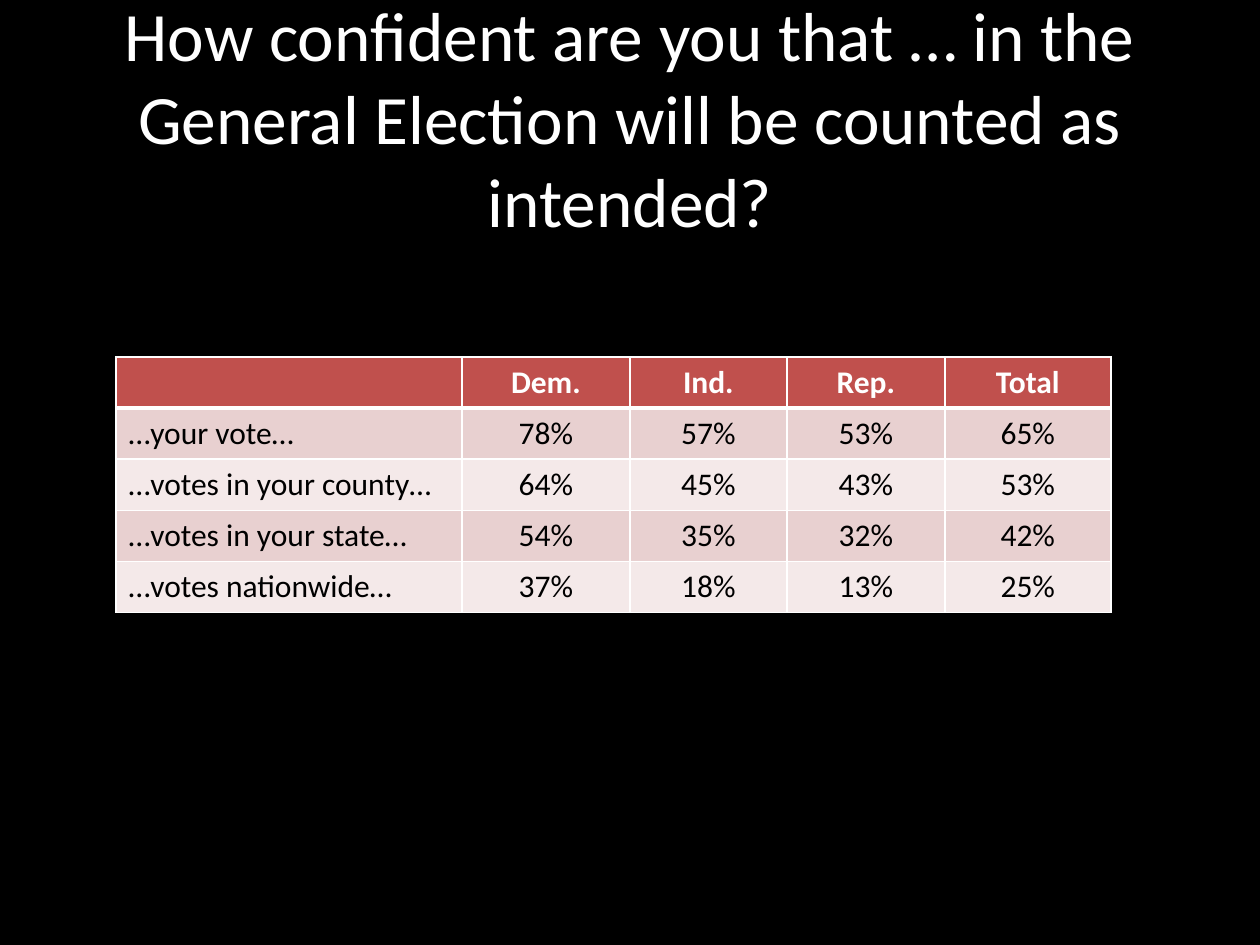
import dataclasses

import lxml.etree
import pptx
import pptx.dml.color
import pptx.enum.text
import pptx.oxml.ns
import pptx.util


@dataclasses.dataclass(frozen=True)
class Theme:
    font: str = "Calibri"
    background: str = "000000"
    light: str = "FFFFFF"
    dark: str = "000000"
    header: str = "C0504D"
    bands: tuple = ("E8D0D0", "F4E9E9")
    title_size: float = 39.6
    table_size: float = 18
    thin_line: float = 1
    thick_line: float = 3


THEME = Theme()
PX = pptx.util.Inches(1) // 126
CENTER = pptx.enum.text.PP_ALIGN.CENTER
LEFT = pptx.enum.text.PP_ALIGN.LEFT


def format_text(frame, size, color, align, bold=False):
    for para in frame.paragraphs:
        para.alignment = align
        for span in para.runs:
            span.font.name = THEME.font
            span.font.size = pptx.util.Pt(size)
            span.font.bold = bold
            span.font.color.rgb = pptx.dml.color.RGBColor.from_string(color)


def add_border(cell, side, width):
    """Draw one cell edge; call in the order L, R, T, B, before the fill is set."""
    properties = cell._tc.get_or_add_tcPr()
    line = lxml.etree.SubElement(
        properties, pptx.oxml.ns.qn(f"a:ln{side}"), w=str(pptx.util.Pt(width))
    )
    fill = lxml.etree.SubElement(line, pptx.oxml.ns.qn("a:solidFill"))
    lxml.etree.SubElement(fill, pptx.oxml.ns.qn("a:srgbClr"), val=THEME.light)


deck = pptx.Presentation()
deck.slide_width = 1260 * PX
deck.slide_height = 945 * PX
page = deck.slides.add_slide(deck.slide_layouts.get_by_name("Title Only"))
page.background.fill.solid()
page.background.fill.fore_color.rgb = pptx.dml.color.RGBColor.from_string(THEME.background)

# Title
title = page.shapes.title
title.left, title.top, title.width, title.height = 63 * PX, 38 * PX, 1134 * PX, 157 * PX
frame = title.text_frame
frame.text = (
    "How confident are you that … in the General Election will be counted as intended?"
)
frame.word_wrap = True
frame.auto_size = pptx.enum.text.MSO_AUTO_SIZE.NONE
frame.vertical_anchor = pptx.enum.text.MSO_ANCHOR.MIDDLE
format_text(frame, THEME.title_size, THEME.light, CENTER)

# Confidence by party
rows = [
    ("", "Dem.", "Ind.", "Rep.", "Total"),
    ("…your vote…", "78%", "57%", "53%", "65%"),
    ("…votes in your county…", "64%", "45%", "43%", "53%"),
    ("…votes in your state…", "54%", "35%", "32%", "42%"),
    ("…votes nationwide…", "37%", "18%", "13%", "25%"),
]
column_widths = [346, 168, 157, 158, 166]
row_height = 51
table = page.shapes.add_table(
    len(rows), len(column_widths),
    116 * PX, 357 * PX, sum(column_widths) * PX, len(rows) * row_height * PX,
).table
for column, width in zip(table.columns, column_widths):
    column.width = width * PX

for row_index, values in enumerate(rows):
    is_header = row_index == 0
    fill_color = THEME.header if is_header else THEME.bands[(row_index - 1) % 2]
    text_color = THEME.light if is_header else THEME.dark
    edges = {
        "L": THEME.thin_line,
        "R": THEME.thin_line,
        "T": THEME.thick_line if row_index == 1 else THEME.thin_line,
        "B": THEME.thick_line if is_header else THEME.thin_line,
    }
    for column_index, value in enumerate(values):
        cell = table.cell(row_index, column_index)
        for side, width in edges.items():
            add_border(cell, side, width)
        cell.fill.solid()
        cell.fill.fore_color.rgb = pptx.dml.color.RGBColor.from_string(fill_color)
        if value:
            cell.text_frame.text = value
            align = CENTER if is_header or column_index else LEFT
            format_text(cell.text_frame, THEME.table_size, text_color, align, is_header)

deck.save("out.pptx")
